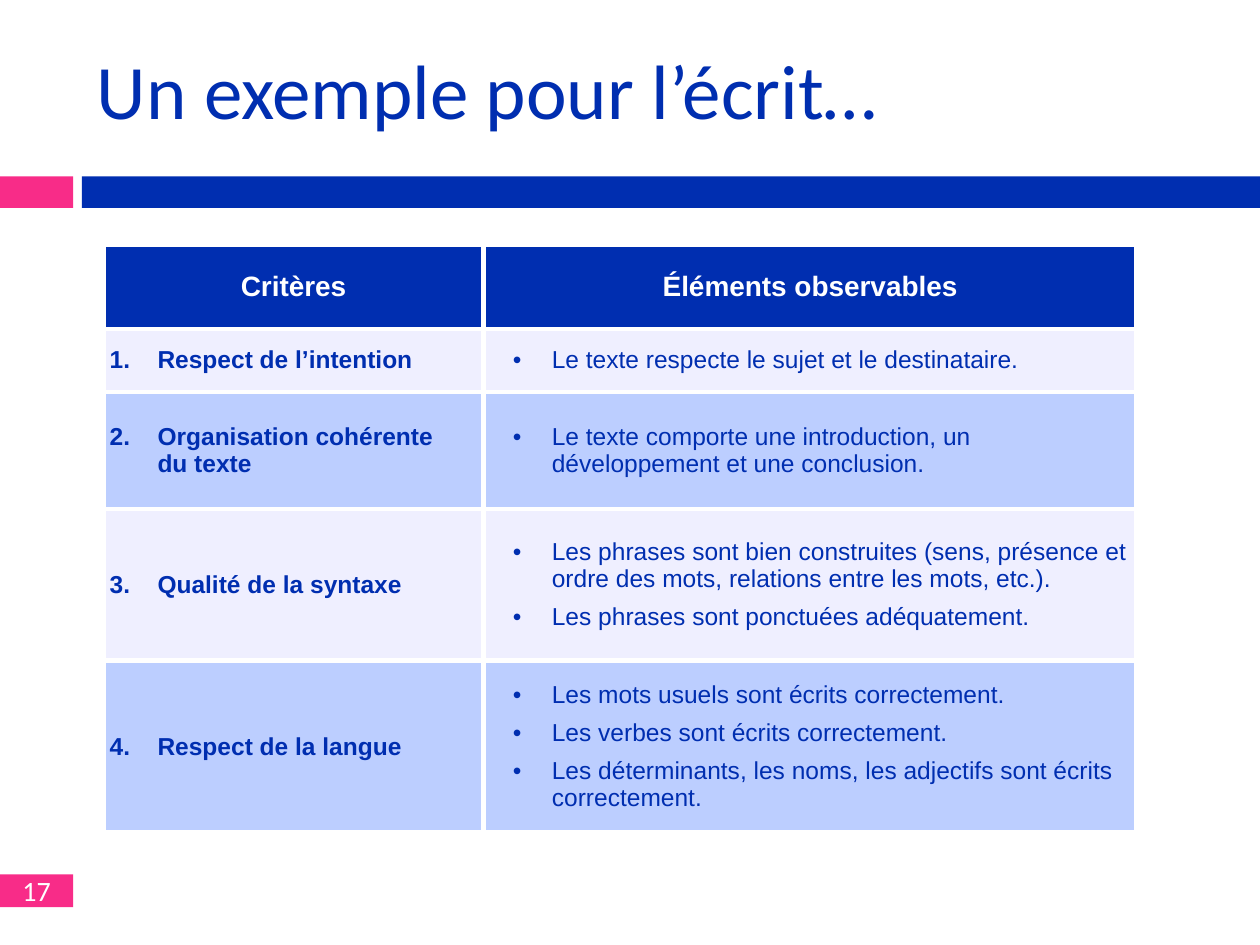
from lxml import etree
from pptx import Presentation
from pptx.dml.color import RGBColor
from pptx.enum.shapes import MSO_SHAPE
from pptx.enum.text import MSO_ANCHOR, PP_ALIGN
from pptx.oxml.ns import qn
from pptx.util import Inches, Pt

RECTANGLE = MSO_SHAPE.RECTANGLE
MIDDLE = MSO_ANCHOR.MIDDLE
LEFT, CENTER = PP_ALIGN.LEFT, PP_ALIGN.CENTER

COLORS = {
    "blue": "002EB0",
    "pink": "F82C88",
    "white": "FFFFFF",
    "pale": "EFEFFF",
    "light": "BCCEFF",
}

HEADERS = ["Critères", "Éléments observables"]
CRITERIA = [
    ("Respect de l’intention",
     ["Le texte respecte le sujet et le destinataire."]),
    ("Organisation cohérente \ndu texte",
     ["Le texte comporte une introduction, un développement et une conclusion."]),
    ("Qualité de la syntaxe",
     ["Les phrases sont bien construites (sens, présence et ordre des mots, "
      "relations entre les mots, etc.).",
      "Les phrases sont ponctuées adéquatement."]),
    ("Respect de la langue",
     ["Les mots usuels sont écrits correctement.",
      "Les verbes sont écrits correctement.",
      "Les déterminants, les noms, les adjectifs sont écrits correctement."]),
]
COLUMN_WIDTHS = [3.02, 5.18]
ROW_HEIGHTS = [0.67, 0.5, 0.93, 1.2, 1.37]


class SlideBuilder:
    """Holds the style and the current slide."""

    title_font = "Calibri"
    table_font = "Arial"
    border_width = 3
    spacing = 3

    def __init__(self, slide):
        self.slide = slide

    def color(self, name):
        return RGBColor.from_string(COLORS[name])

    def add_text(self, paragraph, text, font, size, color, bold=False, align=LEFT):
        paragraph.alignment = align
        for index, line in enumerate(text.split("\n")):
            if index:
                paragraph.add_line_break()
            run = paragraph.add_run()
            run.text = line
            run.font.name = font
            run.font.size = Pt(size)
            run.font.bold = bold
            run.font.color.rgb = self.color(color)

    def bar(self, left, top, width, height, color):
        shape = self.slide.shapes.add_shape(
            RECTANGLE, Inches(left), Inches(top), Inches(width), Inches(height))
        shape.shadow.inherit = False
        shape.fill.solid()
        shape.fill.fore_color.rgb = self.color(color)
        shape.line.fill.background()
        return shape

    def page_number(self, shape, text):
        frame = shape.text_frame
        frame.vertical_anchor = MIDDLE
        frame.margin_top = frame.margin_bottom = 0
        self.add_text(frame.paragraphs[0], text, self.title_font, 16, "white", align=CENTER)

    def title(self, left, top, width, height, text):
        frame = self.slide.shapes.add_textbox(
            Inches(left), Inches(top), Inches(width), Inches(height)).text_frame
        frame.word_wrap = True
        frame.vertical_anchor = MIDDLE
        self.add_text(frame.paragraphs[0], text, self.title_font, 44, "blue")

    def table(self, left, top, widths, heights):
        table = self.slide.shapes.add_table(
            len(heights), len(widths), Inches(left), Inches(top),
            Inches(sum(widths)), Inches(sum(heights))).table
        for column, width in zip(table.columns, widths):
            column.width = Inches(width)
        for row, height in zip(table.rows, heights):
            row.height = Inches(height)
        return table

    def borders(self, cell):
        properties = cell._tc.get_or_add_tcPr()
        for side in ("a:lnL", "a:lnR", "a:lnT", "a:lnB"):
            line = etree.SubElement(properties, qn(side), w=str(Pt(self.border_width)))
            fill = etree.SubElement(line, qn("a:solidFill"))
            etree.SubElement(fill, qn("a:srgbClr"), val=COLORS["white"])

    def indent(self, paragraph, hanging, margin, bullet=None):
        properties = paragraph._p.get_or_add_pPr()
        properties.set("marL", str(Inches(margin)))
        properties.set("indent", str(-Inches(hanging)))
        if bullet:
            etree.SubElement(properties, qn("a:buFont"), typeface=self.table_font)
            etree.SubElement(properties, qn("a:buChar"), char=bullet)

    def cell(self, cell, texts, fill, size, color, bold=False, align=LEFT,
             indent=None, bullet=None):
        self.borders(cell)
        cell.fill.solid()
        cell.fill.fore_color.rgb = self.color(fill)
        cell.vertical_anchor = MIDDLE
        cell.margin_left = cell.margin_right = Inches(0.05)
        cell.margin_top = cell.margin_bottom = 0
        frame = cell.text_frame
        for index, text in enumerate(texts):
            paragraph = frame.add_paragraph() if index else frame.paragraphs[0]
            if indent:
                self.indent(paragraph, *indent, bullet)
            if index:
                paragraph.space_before = Pt(self.spacing)
            paragraph.space_after = Pt(self.spacing)
            self.add_text(paragraph, text, self.table_font, size, color, bold, align)


def main():
    presentation = Presentation()
    presentation.slide_width = Inches(10)
    presentation.slide_height = Inches(7.5)
    builder = SlideBuilder(presentation.slides.add_slide(presentation.slide_layouts[6]))

    # Bars and page number
    builder.bar(0, 1.4, 0.58, 0.25, "pink")
    builder.bar(0.65, 1.4, 9.35, 0.25, "blue")
    builder.page_number(builder.bar(0, 6.94, 0.58, 0.26, "pink"), "17")

    # Title
    builder.title(0.67, 0.08, 8.92, 1.25, "Un exemple pour l’écrit…")

    # Table header
    table = builder.table(0.82, 1.94, COLUMN_WIDTHS, ROW_HEIGHTS)
    for column, header in enumerate(HEADERS):
        builder.cell(table.cell(0, column), [header], "blue", 16, "white",
                     bold=True, align=CENTER)

    # Numbered criteria and their observable elements
    for row, (criterion, elements) in enumerate(CRITERIA, start=1):
        fill = "pale" if row % 2 else "light"
        builder.cell(table.cell(row, 0), [f"{row}.\t{criterion}"], fill, 14, "blue",
                     bold=True, indent=(0.38, 0.38))
        builder.cell(table.cell(row, 1), elements, fill, 14, "blue",
                     indent=(0.31, 0.49), bullet="•")

    presentation.save("out.pptx")


if __name__ == "__main__":
    main()
